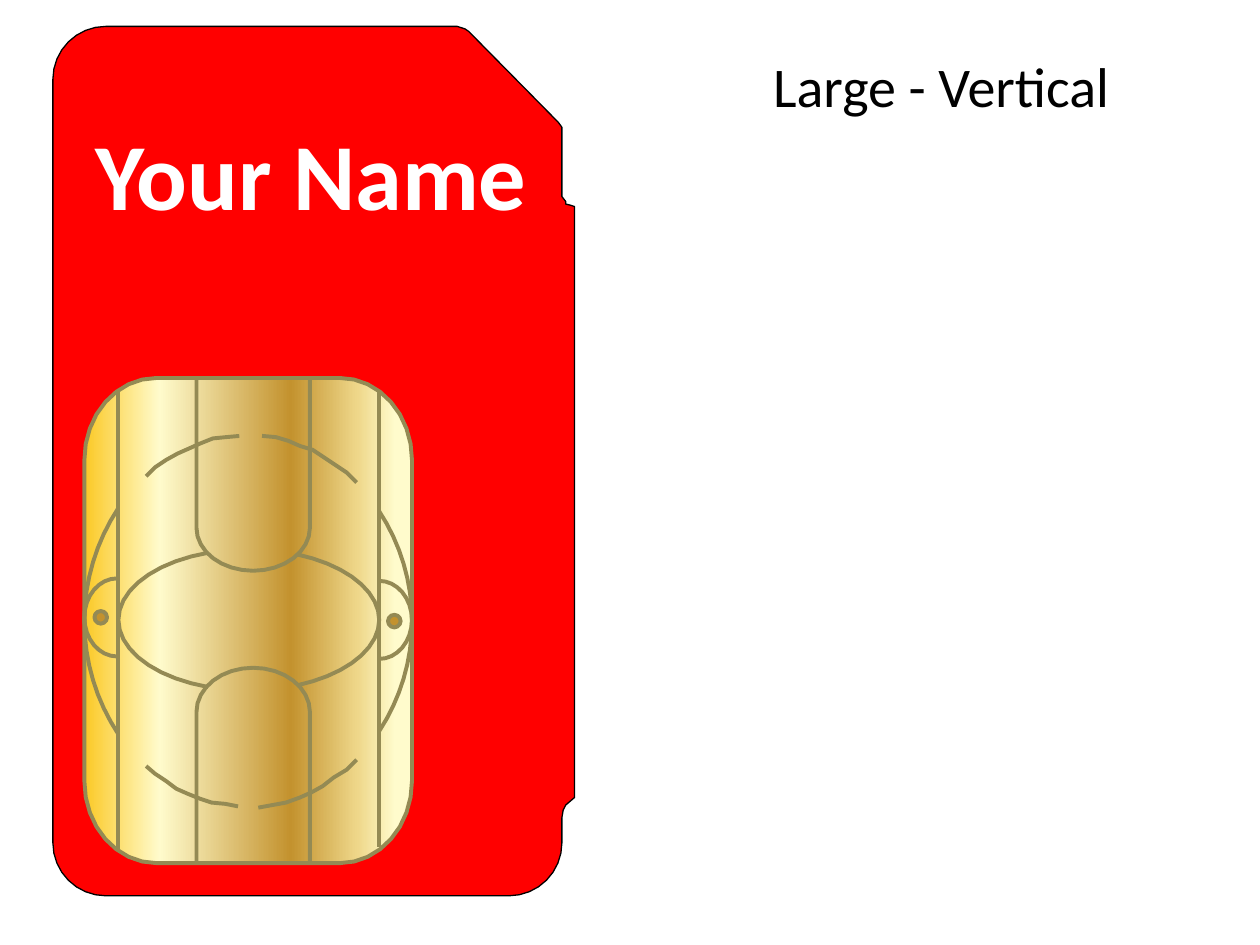
from math import cos, sin, radians
from lxml.etree import SubElement
from pptx import Presentation
from pptx.dml.color import RGBColor
from pptx.enum.shapes import MSO_CONNECTOR, MSO_SHAPE
from pptx.enum.text import MSO_ANCHOR, PP_ALIGN
from pptx.oxml.ns import qn
from pptx.util import Inches, Pt

RED, GOLD, BRONZE = "FF0000", "C3922E", "948A54"
color = RGBColor.from_string


def arc(cx, cy, rx, ry, start, end, steps=8):
    """Points of an elliptical arc; degrees run clockwise from the right."""
    angles = [radians(start + (end - start) * i / steps) for i in range(steps + 1)]
    return [(cx + rx * cos(a), cy + ry * sin(a)) for a in angles]


def add_outline(points, fill=None, line=BRONZE, width=2.25, close=False):
    corners = [(Inches(x), Inches(y)) for x, y in points]
    builder = slide.shapes.build_freeform(*corners[0])
    builder.add_line_segments(corners[1:], close=close)
    outline = builder.convert_to_shape()
    outline.shadow.inherit = False
    if fill:
        outline.fill.solid()
        outline.fill.fore_color.rgb = color(fill)
    else:
        outline.fill.background()
    outline.line.color.rgb = color(line)
    outline.line.width = Pt(width)


prs = Presentation()
prs.slide_width, prs.slide_height = Inches(10), Inches(7.5)
slide = prs.slides.add_slide(prs.slide_layouts[5])

# Heading
heading = slide.shapes.title
heading.left, heading.top = Inches(6.02), Inches(0.36)
heading.width, heading.height = Inches(2.9), Inches(0.64)
heading.text_frame.word_wrap = False
heading.text_frame.vertical_anchor = MSO_ANCHOR.TOP
heading_line = heading.text_frame.paragraphs[0]
heading_line.alignment = PP_ALIGN.CENTER
heading_run = heading_line.add_run()
heading_run.text = "Large - Vertical"
heading_run.font.name = "Calibri"
heading_run.font.size = Pt(32)
heading_run.font.color.rgb = color("000000")

# Card body: three round corners, then the cut corner and the notched right edge
card = (
    arc(4.04, 6.69, 0.42, 0.42, 0, 90)
    + arc(0.84, 6.69, 0.42, 0.42, 90, 180)
    + arc(0.84, 0.63, 0.42, 0.42, 180, 270)
    + [(3.63, 0.21), (3.69, 0.23), (3.72, 0.25), (4.43, 0.97), (4.46, 1.01),
       (4.46, 1.56), (4.49, 1.6), (4.49, 1.62), (4.53, 1.63), (4.56, 1.64),
       (4.56, 6.33), (4.49, 6.39), (4.47, 6.43), (4.46, 6.49)]
)
add_outline(card, fill=RED, line="000000", width=0, close=True)

# Name on the card
owner = slide.shapes.add_textbox(Inches(0.66), Inches(0.87), Inches(3.66), Inches(1.01))
owner.text_frame.word_wrap = False
owner_run = owner.text_frame.paragraphs[0].add_run()
owner_run.text = "Your Name"
owner_run.font.name = "Calibri"
owner_run.font.size = Pt(54)
owner_run.font.bold = True
owner_run.font.color.rgb = color("FFFFFF")

# Chip surface
chip = slide.shapes.add_shape(
    MSO_SHAPE.ROUNDED_RECTANGLE, Inches(0.67), Inches(2.99), Inches(2.6), Inches(3.86))
chip.adjustments[0] = 0.245
chip.shadow.inherit = False
chip.line.fill.background()
chip.fill.gradient()
chip.fill.gradient_angle = 0
stops = chip._element.spPr.find(".//" + qn("a:gsLst"))
stops.clear()
for percent, shade in [(0, "FBC926"), (23, "FFFBCC"), (63, GOLD), (83, "EED688"), (95, "FFFBCC")]:
    stop = SubElement(stops, qn("a:gs"), pos=str(percent * 1000))
    SubElement(stop, qn("a:srgbClr"), val=shade)

# Chip edge
chip_edge = []
for cx, cy, start in [(2.7, 6.2, 0), (1.24, 6.2, 90), (1.24, 3.65, 180), (2.7, 3.65, 270)]:
    chip_edge += arc(cx, cy, 0.57, 0.65, start, start + 90)
add_outline(chip_edge, close=True)

# Contact lines
contacts = [
    # Side crescents
    arc(2.3, 4.93, 1.63, 1.63, 213.4, 146.6, 16),
    arc(1.68, 4.93, 1.59, 1.59, -33.3, 33.3, 16),
    # Four short curves around the middle
    [(1.9, 3.46), (1.79, 3.47), (1.69, 3.48), (1.59, 3.52), (1.5, 3.56),
     (1.41, 3.6), (1.32, 3.65), (1.23, 3.71), (1.16, 3.78)],
    [(2.83, 6.03), (2.75, 6.11), (2.65, 6.17), (2.56, 6.24), (2.47, 6.29),
     (2.38, 6.33), (2.27, 6.37), (2.16, 6.39), (2.05, 6.41)],
    [(2.08, 3.46), (2.19, 3.47), (2.29, 3.5), (2.38, 3.54), (2.48, 3.57),
     (2.57, 3.63), (2.66, 3.69), (2.75, 3.75), (2.83, 3.83)],
    [(1.16, 6.08), (1.23, 6.14), (1.32, 6.2), (1.4, 6.26), (1.49, 6.3),
     (1.59, 6.34), (1.68, 6.37), (1.79, 6.38), (1.89, 6.4)],
    # Halves of the central lens
    arc(1.97, 4.92, 1.04, 0.56, -68, 68, 18),
    arc(1.97, 4.92, 1.03, 0.56, 108, 252, 18),
    # Bottom and top tongues
    [(1.56, 6.84), *arc(2.01, 5.65, 0.45, 0.35, 180, 360, 16), (2.46, 6.84)],
    [(2.46, 2.99), *arc(2.01, 4.19, 0.45, 0.34, 0, 180, 16), (1.56, 2.99)],
    # Side tabs
    arc(0.93, 4.9, 0.26, 0.31, 270, 90, 16),
    arc(3.01, 4.92, 0.26, 0.31, 90, -90, 16),
]
for contact in contacts:
    add_outline(contact)

for x, bottom in [(0.94, 6.75), (3.01, 6.72)]:
    divider = slide.shapes.add_connector(
        MSO_CONNECTOR.STRAIGHT, Inches(x), Inches(bottom), Inches(x), Inches(3.1))
    divider.line.color.rgb = color(BRONZE)
    divider.line.width = Pt(2.25)
    SubElement(divider._element.spPr, qn("a:effectLst"))

for cx, cy in [(0.8, 4.9), (3.13, 4.93)]:
    add_outline(arc(cx, cy, 0.05, 0.05, 0, 360, 12), fill=GOLD, close=True)

prs.save("out.pptx")
